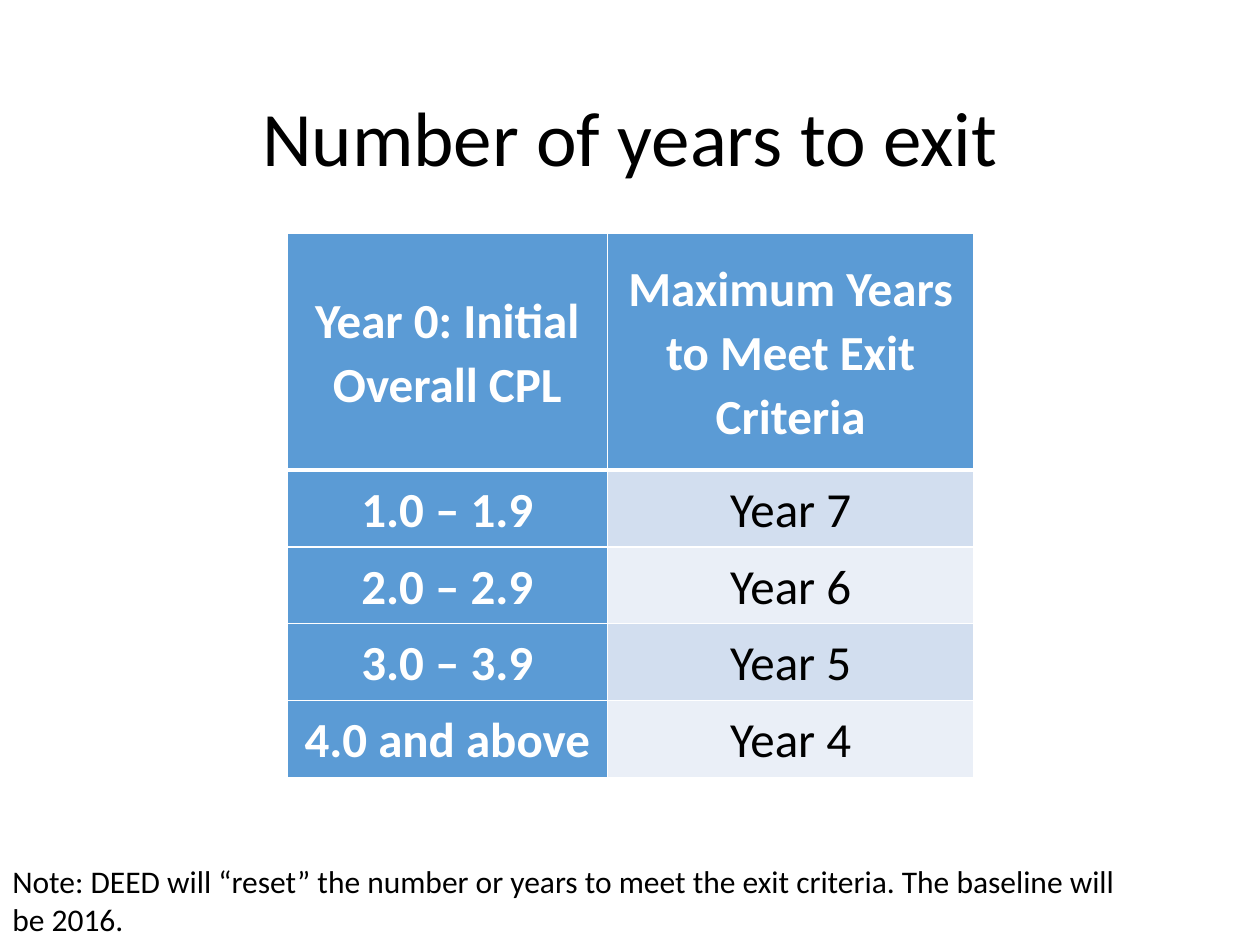
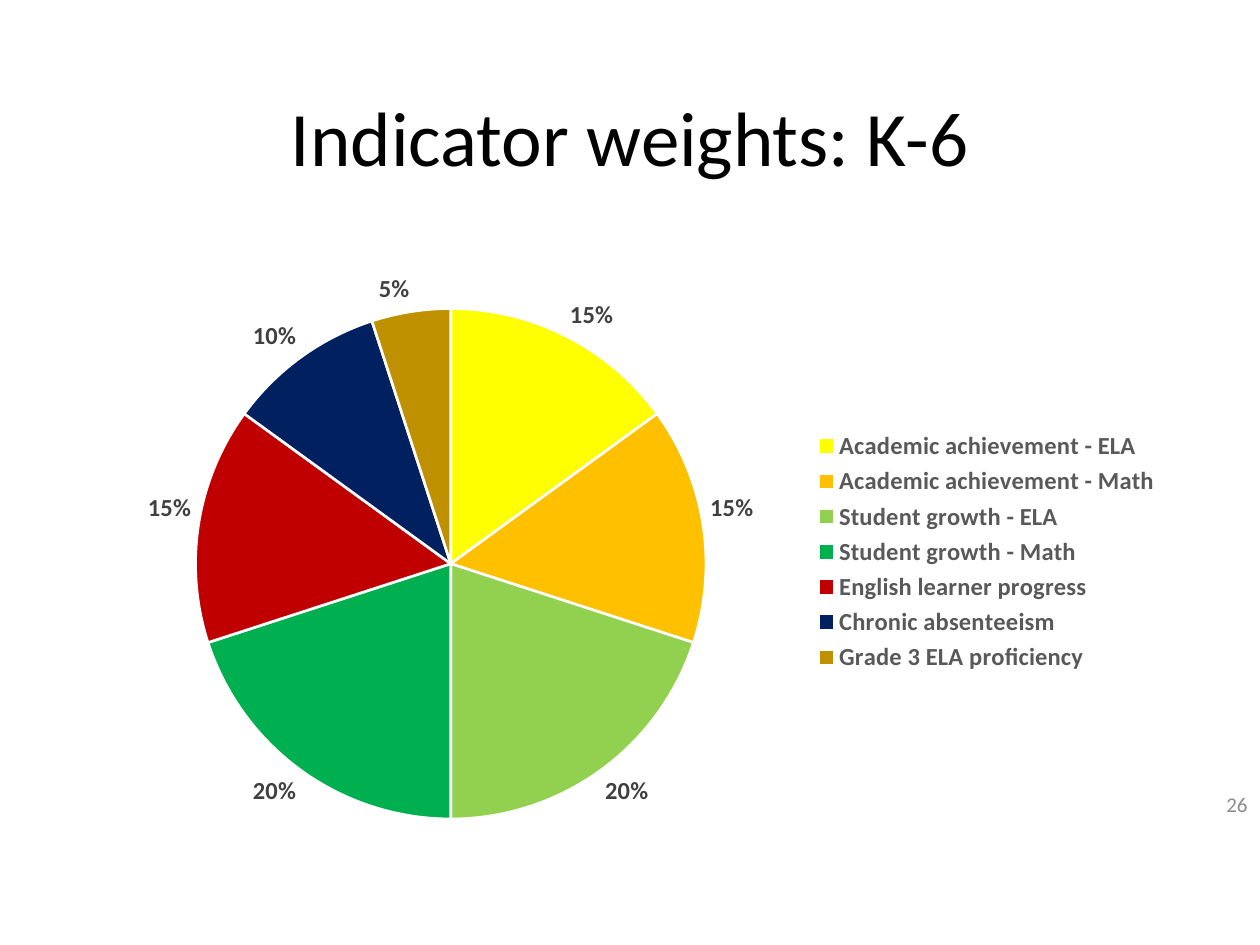
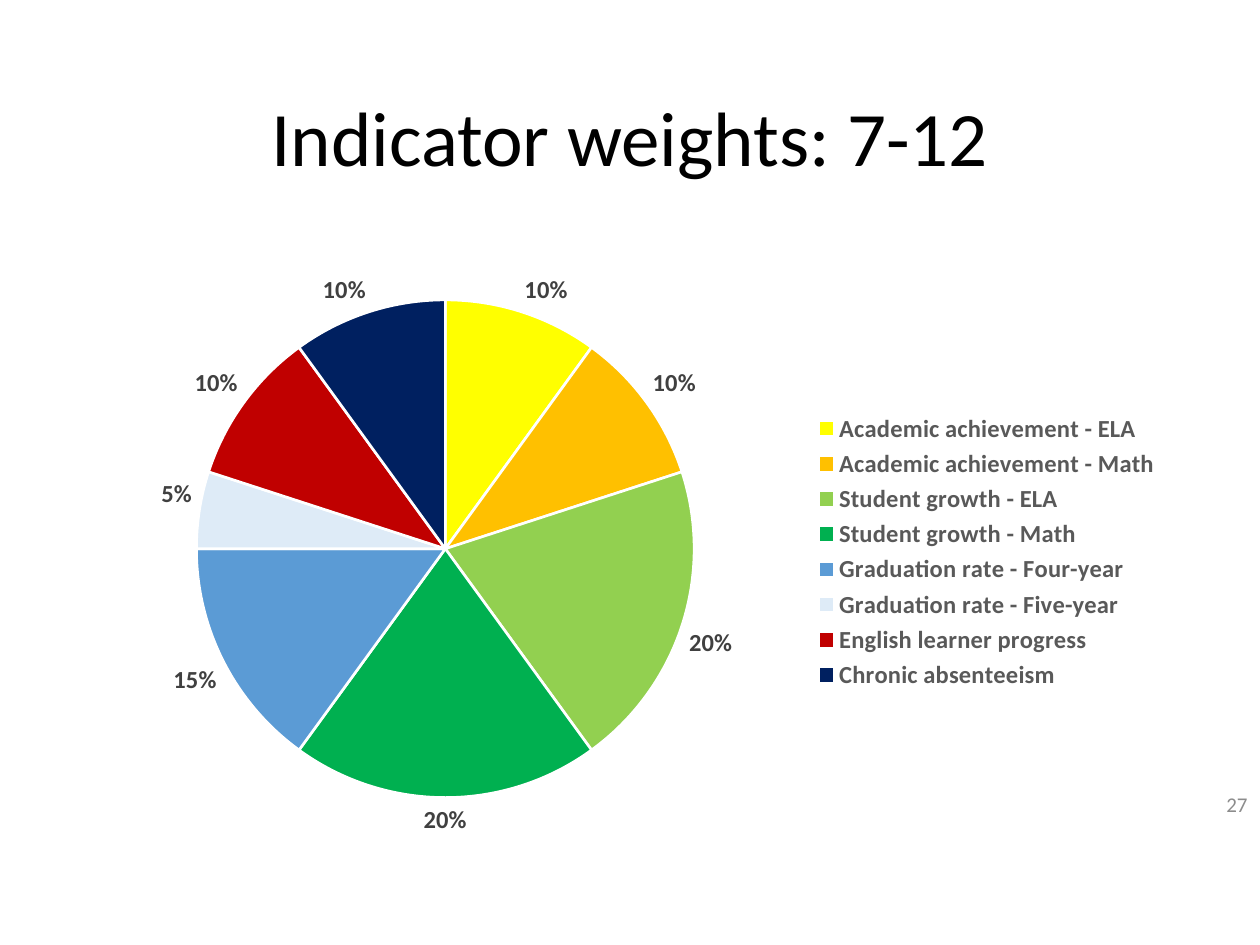
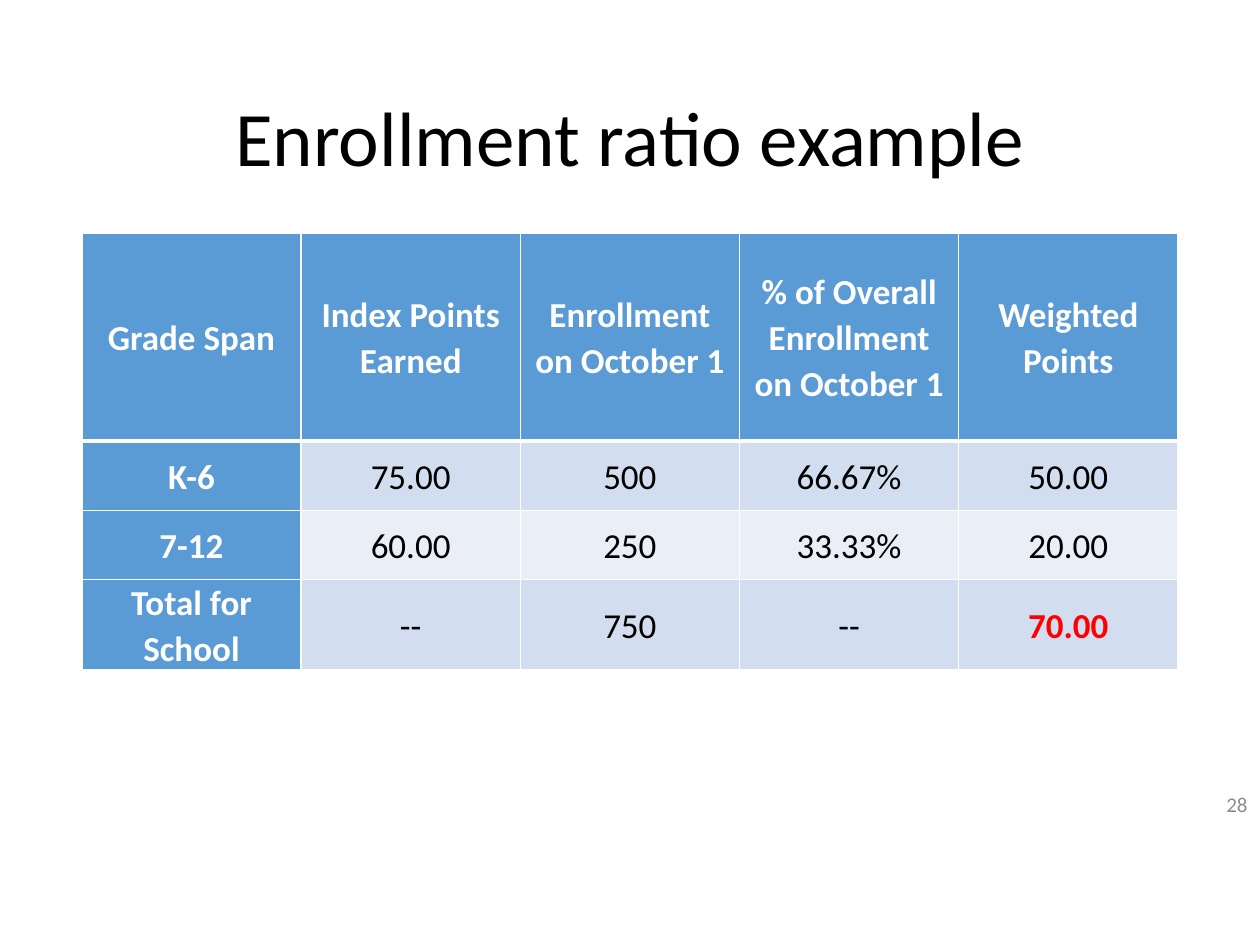
from dataclasses import dataclass

from lxml.etree import SubElement
from pptx import Presentation
from pptx.chart.data import CategoryChartData
from pptx.dml.color import RGBColor
from pptx.enum.chart import XL_CHART_TYPE as ChartType
from pptx.enum.chart import XL_LABEL_POSITION as LabelPosition
from pptx.enum.chart import XL_LEGEND_POSITION as LegendPosition
from pptx.enum.text import MSO_ANCHOR as Anchor
from pptx.enum.text import PP_ALIGN as Align
from pptx.oxml.ns import qn
from pptx.util import Inches, Pt


@dataclass(frozen=True)
class Theme:
    font: str = "Calibri"
    black: str = "000000"
    white: str = "FFFFFF"
    header: str = "5B9BD5"
    bands: tuple = ("D2DEEF", "EAEFF7")
    highlight: str = "FF0000"
    number: str = "8C8C8C"
    label: str = "404040"
    legend: str = "595959"
    title_size: int = 44
    note_size: int = 18
    number_size: int = 12
    chart_size: int = 10
    label_size: int = 14


INDICATOR_COLORS = {
    "Academic achievement - ELA": "FFFF00",
    "Academic achievement - Math": "FFC000",
    "Student growth - ELA": "92D050",
    "Student growth - Math": "00B050",
    "Graduation rate - Four-year": "5B9BD5",
    "Graduation rate - Five-year": "DEEBF7",
    "English learner progress": "C00000",
    "Chronic absenteeism": "002060",
    "Grade 3 ELA proficiency": "BF9000",
}


def set_attributes(target, values):
    for name, value in values.items():
        setattr(target, name, value)


class DeckBuilder:
    def __init__(self, theme):
        self.theme = theme
        self.deck = Presentation()
        self.deck.slide_width, self.deck.slide_height = Inches(10), Inches(7.5)
        self.page = None

    def add_page(self, title, number=None):
        self.page = self.deck.slides.add_slide(self.deck.slide_layouts[6])
        self.add_text(title, (0.69, 0.4, 8.62, 1.45), self.theme.title_size,
                      align=Align.CENTER, anchor=Anchor.MIDDLE, line_spacing=0.9)
        if number:
            self.add_text(str(number), (7.75, 6.18, 2.25, 0.4), self.theme.number_size,
                          self.theme.number, Align.RIGHT, Anchor.MIDDLE)

    def style_font(self, font, size, color, bold=False):
        set_attributes(font, {"name": self.theme.font, "size": Pt(size), "bold": bold})
        font.color.rgb = RGBColor.from_string(color)

    def add_text(self, text, place, size, color=None, align=Align.LEFT,
                 anchor=Anchor.TOP, line_spacing=1.0):
        box = self.page.shapes.add_textbox(*map(Inches, place))
        set_attributes(box.text_frame, {"word_wrap": True, "vertical_anchor": anchor})
        para = box.text_frame.paragraphs[0]
        set_attributes(para, {"alignment": align, "line_spacing": line_spacing})
        span = para.add_run()
        span.text = text
        self.style_font(span.font, size, color or self.theme.black)

    def add_borders(self, cell, row):
        """Draw thin white borders, with a thick one under the header row."""
        widths = {"L": 1, "R": 1, "T": 3 if row == 1 else 1, "B": 3 if row == 0 else 1}
        properties = cell._tc.get_or_add_tcPr()
        for side, width in widths.items():
            line = SubElement(properties, qn(f"a:ln{side}"), w=str(Pt(width)))
            fill = SubElement(line, qn("a:solidFill"))
            SubElement(fill, qn("a:srgbClr"), val=self.theme.white)

    def add_table(self, rows, left, top, widths, heights, size, space_after=0, highlight=None):
        """Add a table with a header row and header column; highlight is (row, column)."""
        theme = self.theme
        frame = self.page.shapes.add_table(
            len(rows), len(widths), Inches(left), Inches(top),
            Inches(sum(widths)), Inches(sum(heights)))
        table = frame.table
        for column, width in zip(table.columns, widths):
            column.width = Inches(width)
        for table_row, height in zip(table.rows, heights):
            table_row.height = Inches(height)
        for row, texts in enumerate(rows):
            for column, text in enumerate(texts):
                is_header = row == 0 or column == 0
                is_highlight = (row, column) == highlight
                color = theme.white if is_header else theme.black
                cell = table.cell(row, column)
                set_attributes(cell, {
                    "vertical_anchor": Anchor.MIDDLE,
                    "margin_left": Inches(0.07), "margin_right": Inches(0.07),
                    "margin_top": 0, "margin_bottom": 0})
                self.add_borders(cell, row)
                cell.fill.solid()
                cell.fill.fore_color.rgb = RGBColor.from_string(
                    theme.header if is_header else theme.bands[(row - 1) % 2])
                para = cell.text_frame.paragraphs[0]
                set_attributes(para, {"alignment": Align.CENTER, "line_spacing": 1.07,
                                      "space_after": Pt(space_after)})
                span = para.add_run()
                span.text = text
                self.style_font(span.font, size, theme.highlight if is_highlight else color,
                                is_header or is_highlight)

    def add_pie(self, weights, plot_area):
        """Add a pie of indicator weights; plot_area holds fractions of the chart frame."""
        theme = self.theme
        data = CategoryChartData()
        data.categories = list(weights)
        data.add_series("Series 1", list(weights.values()))
        chart = self.page.shapes.add_chart(
            ChartType.PIE, Inches(0.69), Inches(2), Inches(8.62), Inches(4.76), data).chart
        self.style_font(chart.font, theme.chart_size, theme.black)
        set_attributes(chart, {"has_title": False, "has_legend": True})
        set_attributes(chart.legend, {"position": LegendPosition.RIGHT,
                                      "include_in_layout": False})
        self.style_font(chart.legend.font, theme.label_size, theme.legend, True)

        plot = chart.plots[0]
        set_attributes(plot, {"vary_by_categories": True, "has_data_labels": True})
        set_attributes(plot.data_labels, {
            "show_percentage": True, "show_value": False, "number_format": "0%",
            "number_format_is_linked": False, "position": LabelPosition.OUTSIDE_END})
        self.style_font(plot.data_labels.font, theme.label_size, theme.label, True)
        for index, indicator in enumerate(weights):
            wedge = plot.series[0].points[index].format
            wedge.fill.solid()
            wedge.fill.fore_color.rgb = RGBColor.from_string(INDICATOR_COLORS[indicator])
            wedge.line.color.rgb = RGBColor.from_string(theme.white)
            wedge.line.width = Pt(1.5)
        self.place_plot(chart, plot_area)

    @staticmethod
    def place_plot(chart, plot_area):
        area = chart._chartSpace.chart.plotArea
        layout = area.find(qn("c:layout"))
        if layout is None:
            layout = SubElement(area, qn("c:layout"))
            area.insert(0, layout)
        manual = SubElement(layout, qn("c:manualLayout"))
        values = ("inner", "edge", "edge", *plot_area)
        for name, value in zip(("layoutTarget", "xMode", "yMode", "x", "y", "w", "h"), values):
            SubElement(manual, qn(f"c:{name}"), val=str(value))


def main():
    theme = Theme()
    builder = DeckBuilder(theme)

    builder.add_page("Number of years to exit")
    builder.add_table(
        [("Year 0: Initial Overall CPL", "Maximum Years to Meet Exit Criteria"),
         ("1.0 – 1.9", "Year 7"),
         ("2.0 – 2.9", "Year 6"),
         ("3.0 – 3.9", "Year 5"),
         ("4.0 and above", "Year 4")],
        2.28, 1.85, [2.54, 2.91], [1.88] + [0.61] * 4, size=28, space_after=8)
    builder.add_text(
        "Note: DEED will “reset” the number or years to meet the exit criteria. "
        "The baseline will be 2016.", (0, 6.79, 9, 0.71), theme.note_size)

    builder.add_page("Indicator weights: K-6", 26)
    builder.add_pie({
        "Academic achievement - ELA": 15,
        "Academic achievement - Math": 15,
        "Student growth - ELA": 20,
        "Student growth - Math": 20,
        "English learner progress": 15,
        "Chronic absenteeism": 10,
        "Grade 3 ELA proficiency": 5,
    }, (0.1, 0.09, 0.47, 0.86))

    builder.add_page("Indicator weights: 7-12", 27)
    builder.add_pie({
        "Academic achievement - ELA": 10,
        "Academic achievement - Math": 10,
        "Student growth - ELA": 20,
        "Student growth - Math": 20,
        "Graduation rate - Four-year": 15,
        "Graduation rate - Five-year": 5,
        "English learner progress": 10,
        "Chronic absenteeism": 10,
    }, (0.1, 0.08, 0.46, 0.83))

    builder.add_page("Enrollment ratio example", 28)
    builder.add_table(
        [("Grade Span", "Index Points Earned", "Enrollment on October 1",
          "% of Overall Enrollment on October 1", "Weighted Points"),
         ("K-6", "75.00", "500", "66.67%", "50.00"),
         ("7-12", "60.00", "250", "33.33%", "20.00"),
         ("Total for School", "--", "750", "--", "70.00")],
        0.65, 1.85, [1.74] * 5, [1.65] + [0.55] * 3, size=20, highlight=(3, 4))

    builder.deck.save("out.pptx")


if __name__ == "__main__":
    main()
